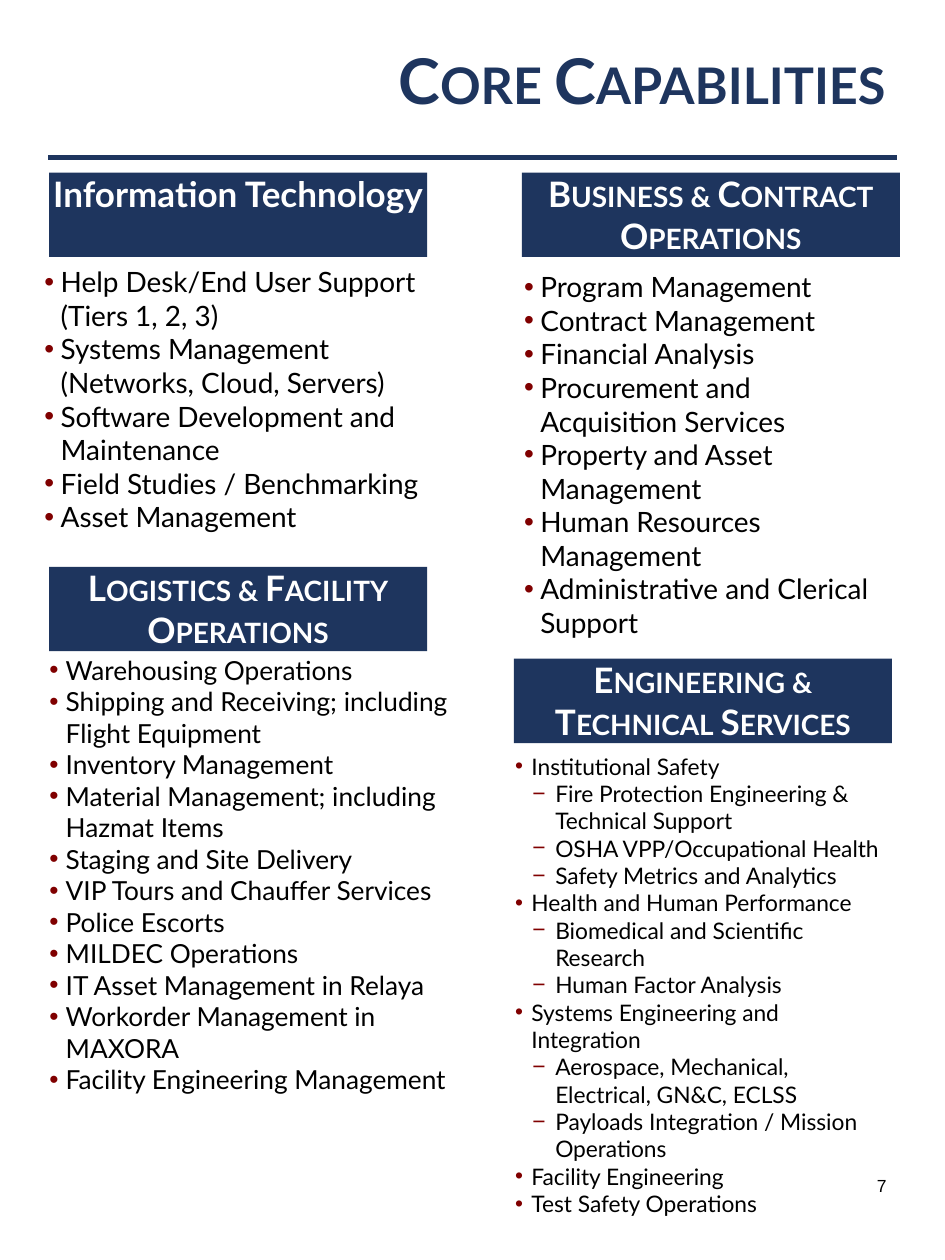
from lxml.etree import SubElement
from pptx import Presentation
from pptx.dml.color import RGBColor
from pptx.enum.shapes import MSO_CONNECTOR as Connector, MSO_SHAPE as Preset
from pptx.enum.text import MSO_ANCHOR as Anchor, MSO_AUTO_SIZE as AutoSize, PP_ALIGN as Align
from pptx.oxml.ns import qn
from pptx.util import Cm, Pt

NAVY, MAROON, BLACK, WHITE = "1E355E", "800000", "000000", "FFFFFF"
COMPARISON_LAYOUT = 4
HEADING_SIZE = (7.62, 1.7)
# Bullet sign, left margin and hanging indent in cm for each level
LEVELS = [("•", 0.33, 0.33), ("−", 0.81, 0.46)]

# Heading, small caps, heading corner, list offset, list size, text size, (level, item)
SECTIONS = [
    ("Information Technology", False, (0.99, 3.48), (-0.35, 1.73), (8.46, 5.74), 16, [
        (0, "Help Desk/End User Support (Tiers 1, 2, 3)"),
        (0, "Systems Management (Networks, Cloud, Servers)"),
        (0, "Software Development and Maintenance"),
        (0, "Field Studies / Benchmarking"),
        (0, "Asset Management")]),
    ("Business & Contract Operations", True, (10.52, 3.48), (-0.21, 1.83), (7.82, 7.77), 16, [
        (0, "Program Management"),
        (0, "Contract Management"),
        (0, "Financial Analysis"),
        (0, "Procurement and Acquisition Services"),
        (0, "Property and Asset Management"),
        (0, "Human Resources Management"),
        (0, "Administrative and Clerical Support")]),
    ("Logistics & Facility Operations", True, (0.99, 11.43), (-0.25, 1.63), (8.99, 9.25), 15, [
        (0, "Warehousing Operations"),
        (0, "Shipping and Receiving; including Flight Equipment"),
        (0, "Inventory Management"),
        (0, "Material Management; including Hazmat Items"),
        (0, "Staging and Site Delivery"),
        (0, "VIP Tours and Chauffer Services"),
        (0, "Police Escorts"),
        (0, "MILDEC Operations"),
        (0, "IT Asset Management in Relaya"),
        (0, "Workorder Management in MAXORA"),
        (0, "Facility Engineering Management")]),
    ("Engineering & Technical Services", True, (10.36, 13.28), (-0.23, 1.76), (8.0, 9.7), 13, [
        (0, "Institutional Safety"),
        (1, "Fire Protection Engineering & Technical Support"),
        (1, "OSHA VPP/Occupational Health"),
        (1, "Safety Metrics and Analytics"),
        (0, "Health and Human Performance"),
        (1, "Biomedical and Scientific Research"),
        (1, "Human Factor Analysis"),
        (0, "Systems Engineering and Integration"),
        (1, "Aerospace, Mechanical, Electrical, GN&C, ECLSS"),
        (1, "Payloads Integration / Mission Operations"),
        (0, "Facility Engineering"),
        (0, "Test Safety Operations")]),
]


def colour(hex_string):
    return RGBColor.from_string(hex_string)


def apply(target, values):
    for name, value in values.items():
        setattr(target, name, value)


def place(shape, left, top, width, height):
    apply(shape, {"left": Cm(left), "top": Cm(top), "width": Cm(width), "height": Cm(height)})


def write(para, text, size, hex_string, font="Lato", bold=False, small_caps=False):
    span = para.add_run()
    span.text = text
    apply(span.font, {"name": font, "size": Pt(size), "bold": bold})
    span.font.color.rgb = colour(hex_string)
    if small_caps:
        span.font._element.set("cap", "small")


def add_bullet(para, level):
    sign, margin, hang = LEVELS[level]
    apply(para, {"level": level, "space_before": Pt(0), "alignment": Align.LEFT})
    props = para._p.get_or_add_pPr()
    props.set("marL", str(Cm(margin)))
    props.set("indent", str(-Cm(hang)))
    SubElement(SubElement(props, qn("a:buClr")), qn("a:srgbClr"), val=MAROON)
    SubElement(props, qn("a:buFont"), typeface="Arial")
    SubElement(props, qn("a:buChar"), char=sign)


def add_title(page, left, top, width, height):
    title = page.shapes.title
    place(title, left, top, width, height)
    apply(title.text_frame, {"vertical_anchor": Anchor.MIDDLE, "auto_size": AutoSize.NONE})
    para = title.text_frame.paragraphs[0]
    para.alignment = Align.RIGHT
    write(para, "Core Capabilities", 36, NAVY, bold=True, small_caps=True)


def add_rule(page, left, top, width):
    rule = page.shapes.add_connector(
        Connector.STRAIGHT, Cm(left), Cm(top), Cm(left + width), Cm(top))
    rule.line.width = Pt(3)
    rule.line.color.rgb = colour(NAVY)
    SubElement(rule._element.spPr, qn("a:effectLst"))


def add_heading(page, text, small_caps, left, top, width, height):
    box = page.shapes.add_shape(Preset.RECTANGLE, Cm(left), Cm(top), Cm(width), Cm(height))
    box.shadow.inherit = False
    box.fill.solid()
    box.fill.fore_color.rgb = colour(NAVY)
    box.line.fill.background()
    apply(box.text_frame, {
        "margin_left": 0, "margin_right": 0, "margin_top": 0, "margin_bottom": 0,
        "vertical_anchor": Anchor.TOP, "word_wrap": True})
    para = box.text_frame.paragraphs[0]
    para.alignment = Align.CENTER
    write(para, text, 20, WHITE, bold=True, small_caps=small_caps)


def add_section(page, body, heading, small_caps, corner, offset, list_size, size, items):
    left, top = corner
    add_heading(page, heading, small_caps, left, top, *HEADING_SIZE)
    # Bulleted list below the heading
    place(body, left + offset[0], top + offset[1], *list_size)
    frame = body.text_frame
    apply(frame, {"vertical_anchor": Anchor.TOP, "auto_size": AutoSize.NONE, "word_wrap": True})
    for number, (level, item) in enumerate(items):
        para = frame.add_paragraph() if number else frame.paragraphs[0]
        add_bullet(para, level)
        write(para, item, size, BLACK)


def add_page_number(page, left, top, width, height):
    box = page.shapes.add_textbox(Cm(left), Cm(top), Cm(width), Cm(height))
    box.text_frame.word_wrap = True
    para = box.text_frame.paragraphs[0]
    para.alignment = Align.RIGHT
    write(para, "7", 10, BLACK, font="Arial")


def main():
    deck = Presentation()
    apply(deck, {"slide_width": Cm(19.05), "slide_height": Cm(25.4)})
    page = deck.slides.add_slide(deck.slide_layouts[COMPARISON_LAYOUT])
    bodies = [box for box in page.placeholders if box.placeholder_format.idx > 0]

    add_rule(page, 0.97, 3.18, 17.11)
    add_title(page, 3.02, 0, 15.09, 3.18)
    for body, section in zip(bodies, SECTIONS):
        add_section(page, body, *section)
    add_page_number(page, 13.67, 23.57, 4.45, 1.32)
    deck.save("out.pptx")


if __name__ == "__main__":
    main()
